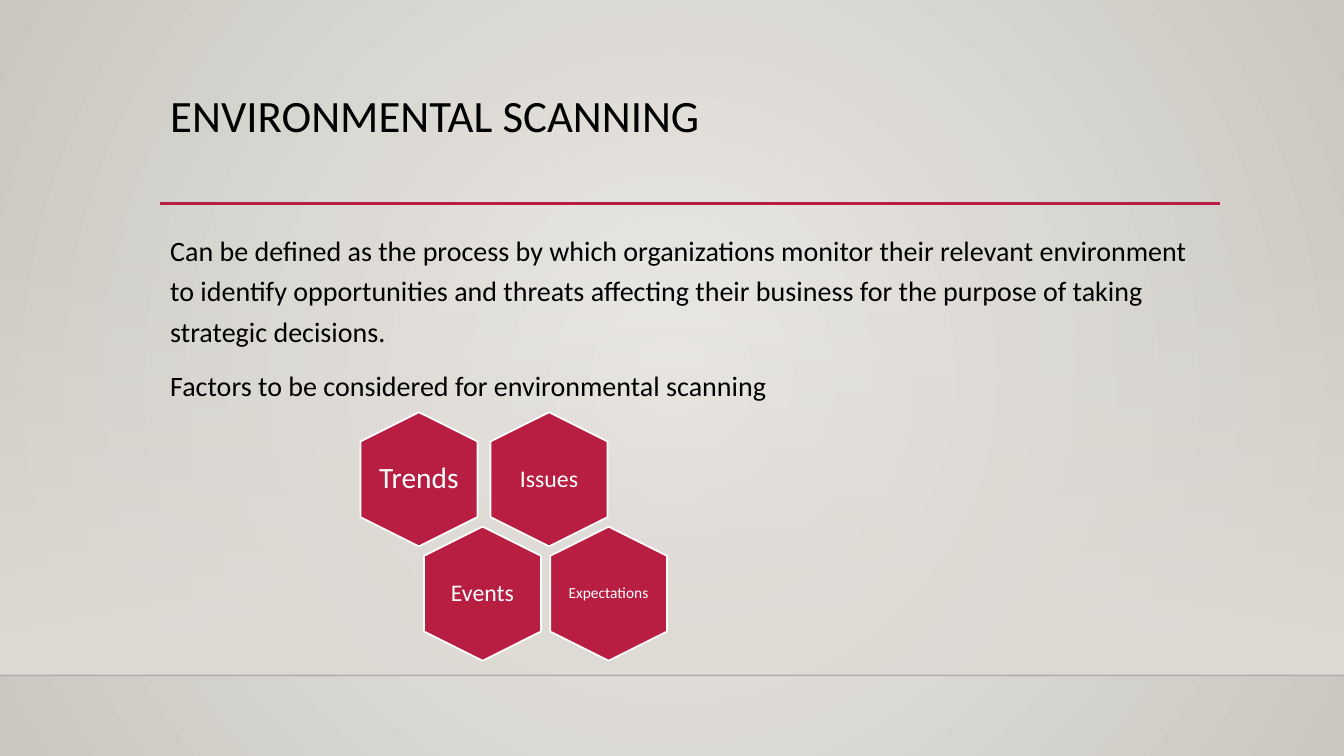
from lxml.etree import SubElement
from pptx import Presentation
from pptx.dml.color import RGBColor
from pptx.enum.shapes import MSO_CONNECTOR as Connector, MSO_SHAPE as Shape
from pptx.enum.text import MSO_ANCHOR as Anchor, PP_ALIGN as Align
from pptx.oxml.ns import qn
from pptx.util import Inches, Pt

BLACK = RGBColor(0x00, 0x00, 0x00)
WHITE = RGBColor(0xFF, 0xFF, 0xFF)
CRIMSON = RGBColor(0xB7, 0x1E, 0x42)
RULE_INK = RGBColor(0x00, 0x00, 0x01)
GLOW = RGBColor(0xEC, 0xEA, 0xE7)
EDGE = RGBColor(0xCA, 0xC7, 0xC1)
SAND = RGBColor(0xDF, 0xDB, 0xD5)

WIDTH, HEIGHT = Inches(13.33), Inches(7.5)
FONT = "Calibri"
LEFT, TEXT_WIDTH = 11.93, 78.77  # shared text column, percent of width

DEFINITION = (
    "Can be defined as the process by which organizations monitor their relevant "
    "environment to identify opportunities and threats affecting their business "
    "for the purpose of taking strategic decisions."
)
FACTORS_LEAD = "Factors to be considered for environmental scanning"

# Each row: first centre x, pitch, and (word, size, inset in inches) per hexagon
FACTOR_ROWS = [
    (31.17, 9.68, [("Trends", 21, 0), ("Issues", 17, 0.07)]),
    (35.9, 9.38, [("Events", 17, 0.07), ("Expectations", 11, 0)]),
]
FIRST_ROW_Y, ROW_PITCH = 63.4, 15.13
HEXAGON_SIZE = (9.98, 15.47)
LABEL_SIZE = (6, 12.27)


def x(percent):
    return round(WIDTH * percent / 100)


def y(percent):
    return round(HEIGHT * percent / 100)


def box(left, top, width, height):
    return x(left), y(top), x(width), y(height)


def centred(center_x, center_y, size):
    width, height = size
    return box(center_x - width / 2, center_y - height / 2, width, height)


def set_all(target, values):
    for name, value in values.items():
        setattr(target, name, value)


def set_alpha(color_element, percent):
    SubElement(color_element, qn("a:alpha")).set("val", str(percent * 1000))


def two_stop_gradient(fill, start, end):
    fill.gradient()
    for stop, color in zip(fill.gradient_stops, (start, end)):
        stop.color.rgb = color


def add_background(slide):
    two_stop_gradient(slide.background.fill, GLOW, EDGE)
    gradient = slide.element.find(".//" + qn("a:gradFill"))
    gradient.remove(gradient.find(qn("a:lin")))
    circle = SubElement(gradient, qn("a:path"), {"path": "circle"})
    SubElement(circle, qn("a:fillToRect"), dict.fromkeys("ltrb", "50000"))


def add_band(slide):
    band = slide.shapes.add_shape(Shape.RECTANGLE, *box(0, 29.47, 100, 59.87))
    band.shadow.inherit = False
    band.line.fill.background()
    two_stop_gradient(band.fill, SAND, SAND)
    band.fill.gradient_angle = 270
    set_alpha(band.element.find(".//" + qn("a:srgbClr")), 0)


def add_rule(slide, start, end, level, color, weight, opacity=100):
    rule = slide.shapes.add_connector(
        Connector.STRAIGHT, x(start), y(level), x(end), y(level))
    rule.line.color.rgb = color
    rule.line.width = Pt(weight)
    if opacity < 100:
        set_alpha(rule.element.find(".//" + qn("a:srgbClr")), opacity)
    SubElement(rule.element.spPr, qn("a:effectLst"))


def add_text(slide, place, lines, size, color, frame_format, line_format, gap=0):
    frame = slide.shapes.add_textbox(*place).text_frame
    set_all(frame, {"word_wrap": True, **frame_format})
    for index, line in enumerate(lines):
        paragraph = frame.add_paragraph() if index else frame.paragraphs[0]
        paragraph.text = line
        set_all(paragraph, line_format)
        if index:
            paragraph.space_before = Pt(gap)
        set_all(paragraph.font, {"name": FONT, "size": Pt(size)})
        paragraph.font.color.rgb = color


def add_factor(slide, center_x, center_y, word, size, inset):
    # The hexagon is turned on its point, so its label is a separate upright box
    hexagon = slide.shapes.add_shape(
        Shape.HEXAGON, *centred(center_x, center_y, HEXAGON_SIZE))
    hexagon.rotation = 90
    hexagon.shadow.inherit = False
    hexagon.fill.solid()
    hexagon.fill.fore_color.rgb = CRIMSON
    hexagon.line.color.rgb = WHITE
    hexagon.line.width = Pt(1.25)

    sides = ("margin_left", "margin_top", "margin_right", "margin_bottom")
    frame_format = {"vertical_anchor": Anchor.MIDDLE,
                    **dict.fromkeys(sides, Inches(inset))}
    add_text(slide, centred(center_x, center_y, LABEL_SIZE), [word], size, WHITE,
             frame_format, {"alignment": Align.CENTER, "line_spacing": 0.9})


def main():
    deck = Presentation()
    set_all(deck, {"slide_width": WIDTH, "slide_height": HEIGHT})
    slide = deck.slides.add_slide(deck.slide_layouts[6])

    # Backdrop
    add_background(slide)
    add_band(slide)
    add_rule(slide, 0, 100, 89.33, RULE_INK, 1, opacity=20)
    add_rule(slide, LEFT, 90.77, 26.93, CRIMSON, 2.5)

    # Title and definition
    top = {"vertical_anchor": Anchor.TOP}
    add_text(slide, box(LEFT, 11.73, TEXT_WIDTH, 15.33), ["ENVIRONMENTAL SCANNING"],
             32, BLACK, top, {"line_spacing": 0.9})
    add_text(slide, box(LEFT, 29.33, TEXT_WIDTH, 60.8), [DEFINITION, FACTORS_LEAD],
             20, BLACK, top, {"line_spacing": 1.2}, gap=10)

    # Honeycomb of factors
    for row, (first_x, pitch, factors) in enumerate(FACTOR_ROWS):
        for column, factor in enumerate(factors):
            add_factor(slide, first_x + column * pitch,
                       FIRST_ROW_Y + row * ROW_PITCH, *factor)

    deck.save("out.pptx")


if __name__ == "__main__":
    main()
